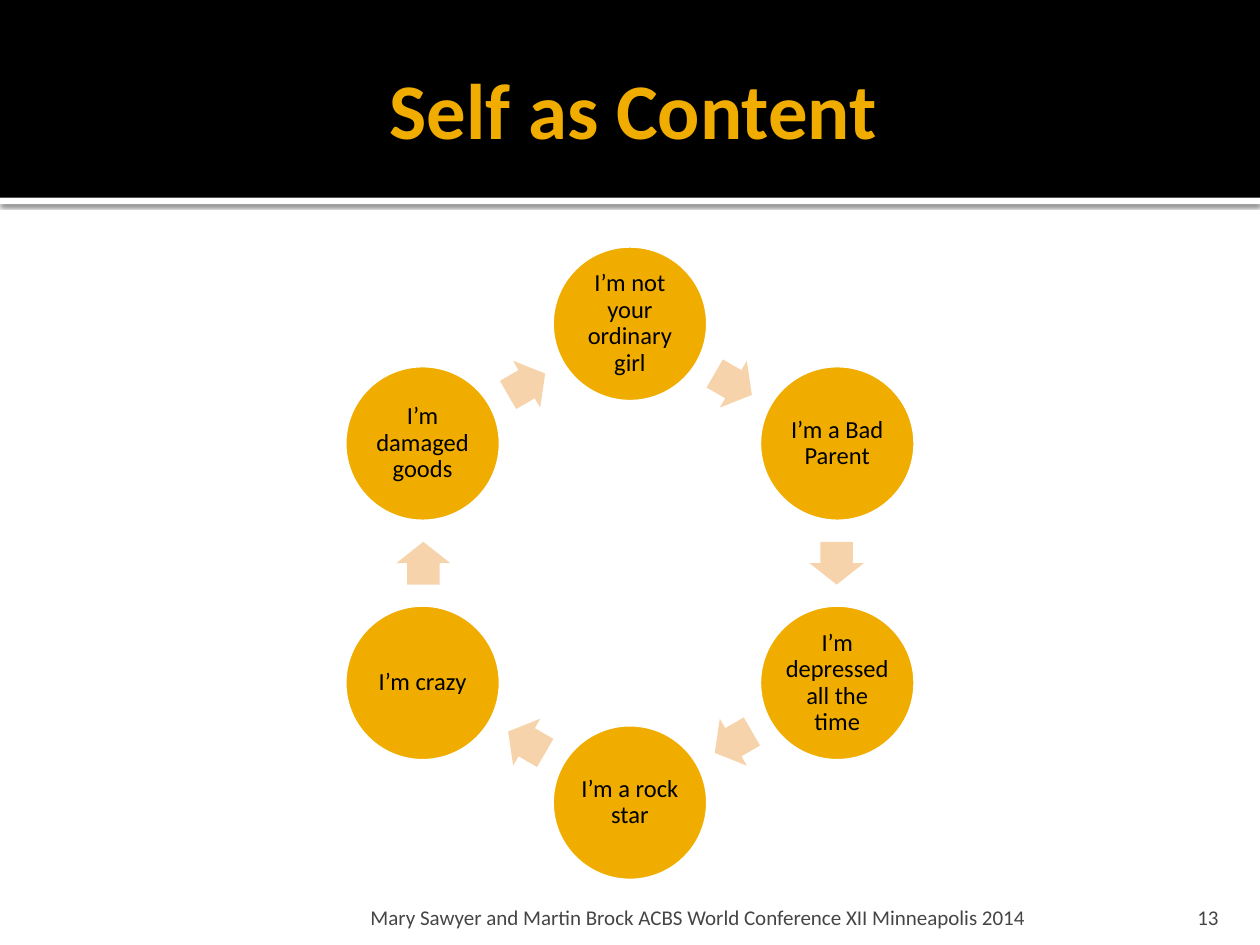
"""Build the "Self as Content" slide: a ring of six self-statements joined by arrows."""
from dataclasses import dataclass
from math import cos, radians, sin

from lxml import etree
from pptx import Presentation
from pptx.dml.color import RGBColor
from pptx.enum import shapes, text
from pptx.oxml import ns
from pptx.util import Inches, Pt

BLACK = RGBColor(0x00, 0x00, 0x00)
WHITE = RGBColor(0xFF, 0xFF, 0xFF)
GOLD = RGBColor(0xF0, 0xAD, 0x00)
PEACH = RGBColor(0xF6, 0xD3, 0xAB)
GREY = RGBColor(0x45, 0x45, 0x45)
FONT = "Calibri"

CENTER_X, CENTER_Y = 5, 4.47
CIRCLE_RADIUS, ARROW_RADIUS = 1.9, 1.64
DIAMETER = 1.26
ARROW_WIDTH, ARROW_HEIGHT = 0.34, 0.43
STATEMENTS = [
    "I’m not your ordinary girl",
    "I’m a Bad Parent",
    "I’m depressed all the time",
    "I’m a rock star",
    "I’m crazy",
    "I’m damaged goods",
]


@dataclass
class Box:
    left: float
    top: float
    width: float
    height: float

    def lengths(self) -> list:
        return [Inches(n) for n in (self.left, self.top, self.width, self.height)]


@dataclass
class TextStyle:
    size: float
    color: RGBColor
    align: text.PP_ALIGN
    anchor: text.MSO_ANCHOR
    insets: tuple
    bold: bool = False
    line_spacing: float = 1.0


TITLE = TextStyle(45, GOLD, text.PP_ALIGN.CENTER, text.MSO_ANCHOR.MIDDLE,
                  (0.1, 0.05, 0.05, 0.05), bold=True)
STATEMENT = TextStyle(14, BLACK, text.PP_ALIGN.CENTER, text.MSO_ANCHOR.MIDDLE,
                      (0.02, 0.02, 0.02, 0.02), line_spacing=0.9)
FOOTER = TextStyle(12, GREY, text.PP_ALIGN.LEFT, text.MSO_ANCHOR.BOTTOM,
                   (0.05, 0.05, 0.05, 0))
NUMBER = TextStyle(12, GREY, text.PP_ALIGN.RIGHT, text.MSO_ANCHOR.BOTTOM,
                   (0.1, 0.05, 0.1, 0))


def write_text(shape, words: str, style: TextStyle) -> None:
    frame = shape.text_frame
    frame.word_wrap = True
    frame.auto_size = text.MSO_AUTO_SIZE.NONE
    frame.vertical_anchor = style.anchor
    (frame.margin_left, frame.margin_top,
     frame.margin_right, frame.margin_bottom) = map(Inches, style.insets)
    paragraph = frame.paragraphs[0]
    paragraph.alignment = style.align
    paragraph.line_spacing = style.line_spacing
    run = paragraph.add_run()
    run.text = words
    run.font.name = FONT
    run.font.size = Pt(style.size)
    run.font.bold = style.bold
    run.font.color.rgb = style.color


def add_filled(slide, kind: shapes.MSO_SHAPE, box: Box, fill: RGBColor):
    shape = slide.shapes.add_shape(kind, *box.lengths())
    shape.shadow.inherit = False
    shape.fill.solid()
    shape.fill.fore_color.rgb = fill
    shape.line.fill.background()
    return shape


def add_drop_shadow(shape) -> None:
    effects = shape.element.spPr.find(ns.qn("a:effectLst"))
    shadow = etree.SubElement(effects, ns.qn("a:outerShdw"), blurRad=str(Pt(2.5)),
                              dist=str(Pt(0.8)), dir="5400000", rotWithShape="0")
    color = etree.SubElement(shadow, ns.qn("a:srgbClr"), val=str(BLACK))
    etree.SubElement(color, ns.qn("a:alpha"), val="60000")


def ring_box(angle: float, radius: float, width: float, height: float) -> Box:
    x = CENTER_X + radius * sin(radians(angle))
    y = CENTER_Y - radius * cos(radians(angle))
    return Box(x - width / 2, y - height / 2, width, height)


def add_statement(slide, words: str, angle: float) -> None:
    circle = add_filled(slide, shapes.MSO_SHAPE.OVAL,
                        ring_box(angle, CIRCLE_RADIUS, DIAMETER, DIAMETER), GOLD)
    circle.line.color.rgb = WHITE
    circle.line.width = Pt(3.78)
    write_text(circle, words, STATEMENT)


def add_arrow(slide, angle: float) -> None:
    arrow = add_filled(slide, shapes.MSO_SHAPE.RIGHT_ARROW,
                       ring_box(angle, ARROW_RADIUS, ARROW_WIDTH, ARROW_HEIGHT), PEACH)
    arrow.adjustments[0] = 0.6
    arrow.adjustments[1] = 0.5
    arrow.rotation = angle


def add_label(slide, words: str, box: Box, style: TextStyle) -> None:
    write_text(slide.shapes.add_textbox(*box.lengths()), words, style)


def add_header(slide, words: str) -> None:
    title = slide.shapes.title
    title.left, title.top, title.width, title.height = Box(0.5, 0.17, 9, 1.37).lengths()
    write_text(title, words, TITLE)
    stripe = add_filled(slide, shapes.MSO_SHAPE.RECTANGLE, Box(0, 1.57, 10, 0.05), WHITE)
    add_drop_shadow(stripe)
    band = add_filled(slide, shapes.MSO_SHAPE.RECTANGLE, Box(0, 0, 10, 1.57), BLACK)
    for shape in (stripe, band):
        title.element.addprevious(shape.element)


def main() -> None:
    presentation = Presentation()
    presentation.slide_width, presentation.slide_height = Inches(10), Inches(7.5)
    slide = presentation.slides.add_slide(presentation.slide_layouts.get_by_name("Title Only"))
    add_header(slide, "Self as Content")
    step = 360 / len(STATEMENTS)
    for index, words in enumerate(STATEMENTS):
        add_statement(slide, words, index * step)
        add_arrow(slide, (index + 0.5) * step)
    add_label(slide, "13", Box(8.97, 7.08, 0.8, 0.3), NUMBER)
    add_label(slide, "Mary Sawyer and Martin Brock ACBS World Conference XII Minneapolis 2014",
              Box(2.89, 7.08, 6.02, 0.3), FOOTER)
    presentation.save("out.pptx")


if __name__ == "__main__":
    main()
